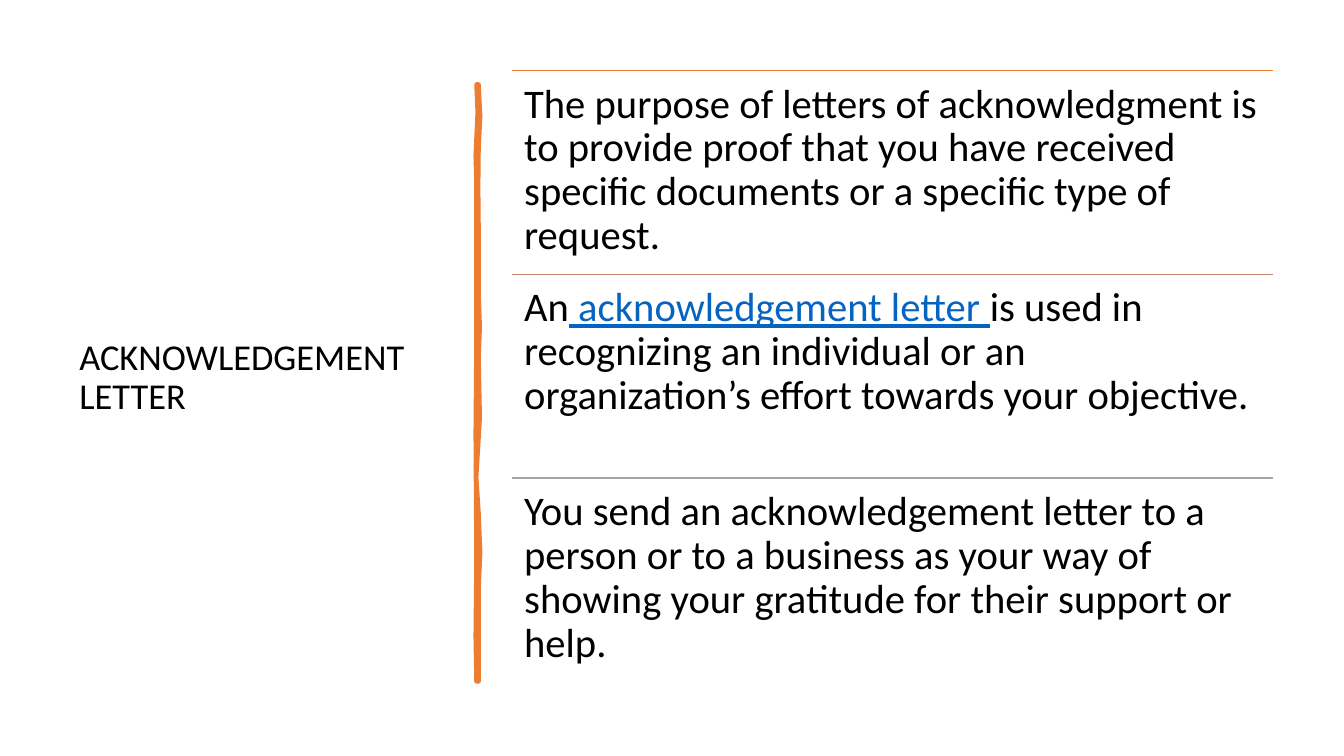
from lxml import etree
from pptx import Presentation
from pptx.dml.color import RGBColor
from pptx.enum import shapes, text
from pptx.oxml.ns import qn
from pptx.util import Cm, Pt

BLACK = RGBColor(0x00, 0x00, 0x00)
ORANGE = RGBColor(0xED, 0x7D, 0x31)
ROSE = RGBColor(0xC4, 0x81, 0x70)
GRAY = RGBColor(0xA5, 0xA5, 0xA5)
LINK_BLUE = RGBColor(0x05, 0x63, 0xC1)
FONT = "Calibri"

# Each statement is a rule colour and a list of (words, looks like a link).
STATEMENTS = [
    (ORANGE, [("The purpose of letters of acknowledgment is to provide proof that you "
               "have received specific documents or a specific type of request.", False)]),
    (ROSE, [("An", False),
            (" acknowledgement letter ", True),
            ("is used in recognizing an individual or an organization’s effort "
             "towards your objective.", False)]),
    (GRAY, [("You send an acknowledgement letter to a person or to a business as your "
             "way of showing your gratitude for their support or help.", False)]),
]

# Hand-drawn edges: (distance from the top, sideways wobble), in cm.
RIGHT_EDGE = [(0, 0), (0.8, 0.04), (1.6, 0), (2.6, -0.01), (3.6, 0), (5.3, 0),
              (6.1, 0.03), (6.9, 0), (8.4, 0.03), (8.9, 0), (9.9, -0.06),
              (10.8, 0), (11.8, 0.04), (12.7, 0), (15.04, 0)]
LEFT_EDGE = [(15.04, 0), (13.9, -0.02), (12, 0), (8.8, -0.02), (6.4, 0),
             (2.5, 0), (1.8, -0.02), (0.7, 0.03), (0, 0)]
STROKE_WIDTH = 0.05


def add_text(page, left, top, width, height, spans, size, anchor, inset_x, inset_y):
    box = page.shapes.add_textbox(Cm(left), Cm(top), Cm(width), Cm(height))
    frame = box.text_frame
    frame.word_wrap = True
    frame.vertical_anchor = anchor
    frame.margin_left = frame.margin_right = Cm(inset_x)
    frame.margin_top = frame.margin_bottom = Cm(inset_y)
    para = frame.paragraphs[0]
    para.line_spacing = 0.9
    para.font.name = FONT
    para.font.size = Pt(size)
    para.font.color.rgb = BLACK
    for words, is_link in spans:
        span = para.add_run()
        span.text = words
        if is_link:
            span.font.color.rgb = LINK_BLUE
            span.font.underline = True


def add_title(page, left, top, width, height):
    add_text(page, left, top, width, height, [("ACKNOWLEDGEMENT LETTER", False)],
             26, text.MSO_ANCHOR.MIDDLE, 0.25, 0.13)


def add_brush_stroke(page, left, top):
    """Draw the wavy vertical divider down from its top left corner."""
    points = [(Cm(left + STROKE_WIDTH + wobble), Cm(top + drop))
              for drop, wobble in RIGHT_EDGE]
    points += [(Cm(left + wobble), Cm(top + drop)) for drop, wobble in LEFT_EDGE]
    builder = page.shapes.build_freeform(*points[0])
    builder.add_line_segments(points[1:], close=True)
    stroke = builder.convert_to_shape()
    stroke.shadow.inherit = False
    stroke.fill.solid()
    stroke.fill.fore_color.rgb = ORANGE
    stroke.line.color.rgb = ORANGE
    stroke.line.width = Pt(3.25)
    etree.SubElement(stroke.line._get_or_add_ln(), qn("a:round"))


def add_rule(page, left, top, width, color):
    rule = page.shapes.add_connector(shapes.MSO_CONNECTOR.STRAIGHT,
                                     Cm(left), Cm(top), Cm(left + width), Cm(top))
    rule.line.color.rgb = color
    rule.line.width = Pt(1)
    etree.SubElement(rule._element.spPr, qn("a:effectLst"))


def add_statements(page, left, top, width, height):
    row_height = height / len(STATEMENTS)
    for index, (color, spans) in enumerate(STATEMENTS):
        row_top = top + index * row_height
        add_rule(page, left, row_top, width, color)
        add_text(page, left, row_top, width, row_height, spans,
                 29, text.MSO_ANCHOR.TOP, 0.31, 0.31)


def main():
    deck = Presentation()
    deck.slide_width, deck.slide_height = Cm(33.87), Cm(19.05)
    page = deck.slides.add_slide(deck.slide_layouts[6])
    add_title(page, 1.75, 1.78, 9.5, 15.52)
    add_brush_stroke(page, 12.01, 2.13)
    add_statements(page, 12.9, 1.78, 19.18, 15.4)
    deck.save("out.pptx")


if __name__ == "__main__":
    main()
